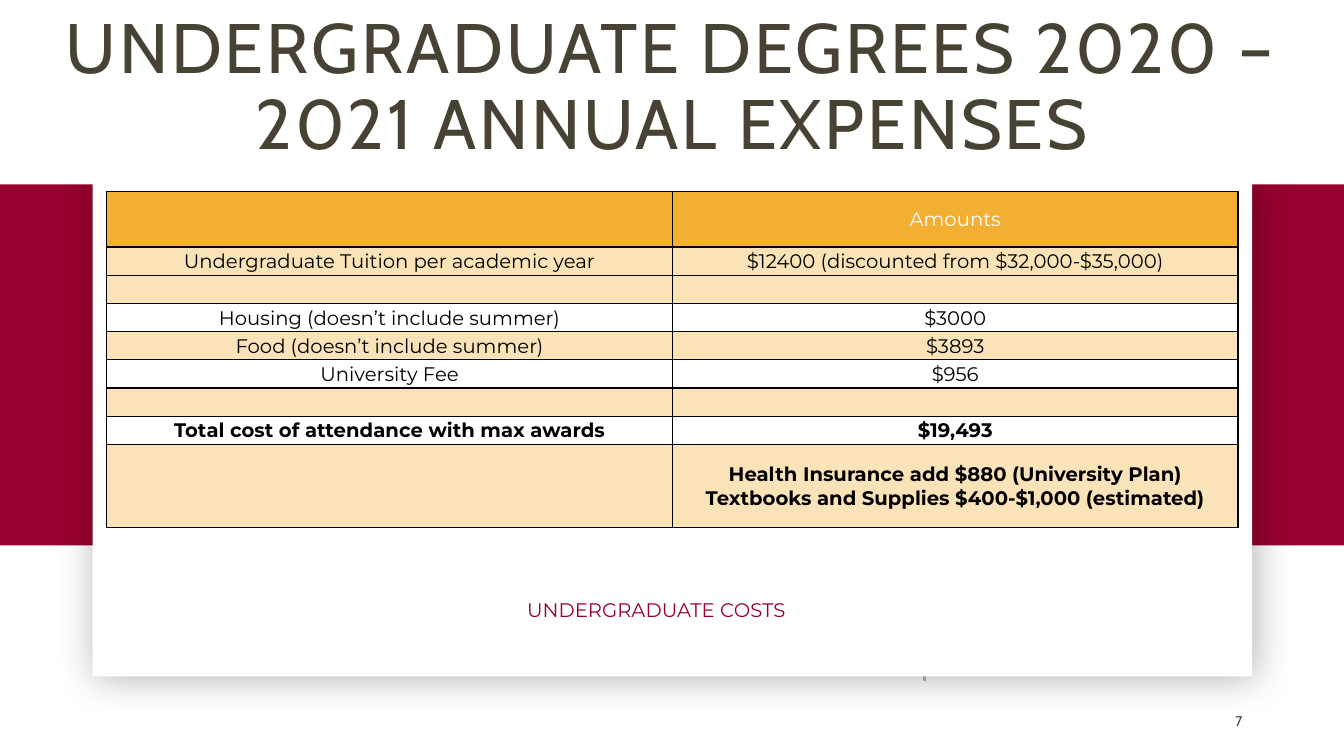
from lxml import etree
from pptx import Presentation
from pptx.dml.color import RGBColor
from pptx.enum.shapes import MSO_CONNECTOR, MSO_SHAPE
from pptx.enum.text import MSO_ANCHOR, PP_ALIGN
from pptx.oxml.ns import qn
from pptx.util import Inches, Pt

RECTANGLE = MSO_SHAPE.RECTANGLE
STRAIGHT = MSO_CONNECTOR.STRAIGHT
MIDDLE, TOP = MSO_ANCHOR.MIDDLE, MSO_ANCHOR.TOP
CENTER, RIGHT = PP_ALIGN.CENTER, PP_ALIGN.RIGHT

WHITE = RGBColor(0xFF, 0xFF, 0xFF)
BLACK = RGBColor(0, 0, 0)
BURGUNDY = RGBColor(0x98, 0x01, 0x2E)
GOLD = RGBColor(0xF2, 0xAF, 0x32)
BROWN = RGBColor(0x47, 0x42, 0x33)
TEAL = RGBColor(0x9C, 0xBE, 0xBD)

HEADING_FONT, BODY_FONT = "Cabin", "Montserrat"

# Left text, right text, row height, fill, fill opacity in percent, bold
EXPENSES = [
    ("", "Amounts", 0.55, GOLD, 100, False),
    ("Undergraduate Tuition per academic year",
     "$12400 (discounted from $32,000-$35,000)", 0.28, GOLD, 35, False),
    ("", "", 0.28, GOLD, 34, False),
    ("Housing (doesn’t include summer)", "$3000", 0.28, WHITE, 100, False),
    ("Food (doesn’t include summer)", "$3893", 0.28, GOLD, 34, False),
    ("University Fee", "$956", 0.28, WHITE, 100, False),
    ("", "", 0.28, GOLD, 34, False),
    ("Total cost of attendance with max awards", "$19,493", 0.28, WHITE, 100, True),
    ("", "Health Insurance add $880 (University Plan)\n"
     "Textbooks and Supplies $400-$1,000 (estimated)", 0.82, GOLD, 34, True),
]


def add_child(parent, tag, **attributes):
    return etree.SubElement(parent, qn(tag), attributes)


def add_panel(page, left, top, width, height, color):
    panel = page.shapes.add_shape(
        RECTANGLE, Inches(left), Inches(top), Inches(width), Inches(height))
    panel.shadow.inherit = False
    panel.fill.solid()
    panel.fill.fore_color.rgb = color
    panel.line.fill.background()
    return panel


def add_soft_shadow(panel):
    effects = panel._element.spPr.find(qn("a:effectLst"))
    shadow = add_child(effects, "a:outerShdw", blurRad=str(Pt(28)), dist=str(Pt(3)),
                       dir=str(45 * 60000), algn="tl", rotWithShape="0")
    color = add_child(shadow, "a:srgbClr", val=str(BLACK))
    add_child(color, "a:alpha", val="30000")


def add_accent_line(page, x, start, end):
    line = page.shapes.add_connector(
        STRAIGHT, Inches(x), Inches(start), Inches(x), Inches(end))
    line.line.color.rgb = TEAL
    line.line.width = Pt(1.5)
    add_child(line._element.spPr, "a:effectLst")


def write_text(frame, text, size, font, color, align=CENTER, bold=False):
    frame.word_wrap = True
    frame.text = text
    for para in frame.paragraphs:
        para.alignment = align
        para.font.size = Pt(size)
        para.font.name = font
        para.font.bold = bold
        para.font.color.rgb = color
        if not para.runs:
            add_child(para._p, "a:endParaRPr", sz=str(size * 100))


def add_label(page, left, top, width, height, text, size, font, color, align, anchor):
    box = page.shapes.add_textbox(
        Inches(left), Inches(top), Inches(width), Inches(height))
    box.text_frame.vertical_anchor = anchor
    write_text(box.text_frame, text, size, font, color, align)


def add_title(page, text):
    banner = add_panel(page, 0, -0.07, 13.33, 1.9, WHITE)
    banner.text_frame.vertical_anchor = MIDDLE
    write_text(banner.text_frame, text, 50, HEADING_FONT, BROWN)
    para = banner.text_frame.paragraphs[0]
    para.line_spacing = 0.9
    para.runs[0]._r.get_or_add_rPr().set("spc", "200")


def style_cell(cell, color, opacity):
    """Give a cell its fill, thin black borders and tight margins."""
    cell.vertical_anchor = MIDDLE
    cell.margin_left = cell.margin_right = cell.margin_top = Inches(0.01)
    cell.margin_bottom = 0
    properties = cell._tc.get_or_add_tcPr()
    for side in ("a:lnL", "a:lnR", "a:lnT", "a:lnB"):
        border = add_child(properties, side, w=str(Pt(1)))
        fill = add_child(border, "a:solidFill")
        add_child(fill, "a:srgbClr", val=str(BLACK))
    cell.fill.solid()
    cell.fill.fore_color.rgb = color
    if opacity < 100:
        tint = properties.find(qn("a:solidFill")).find(qn("a:srgbClr"))
        add_child(tint, "a:alpha", val=str(opacity * 1000))


def add_expense_table(page):
    height = sum(row[2] for row in EXPENSES)
    table = page.shapes.add_table(len(EXPENSES), 2, Inches(1.06), Inches(1.9),
                                  Inches(11.22), Inches(height)).table
    for index, (item, amount, height, color, opacity, bold) in enumerate(EXPENSES):
        table.rows[index].height = Inches(height)
        text_color = WHITE if index == 0 else BLACK
        for cell, text in zip(table.rows[index].cells, (item, amount)):
            style_cell(cell, color, opacity)
            write_text(cell.text_frame, text, 14, BODY_FONT, text_color, bold=bold)


def main():
    deck = Presentation()
    deck.slide_width, deck.slide_height = Inches(13.33), Inches(7.5)
    page = deck.slides.add_slide(deck.slide_layouts[6])
    add_accent_line(page, 9.17, 6.76, 5.76)
    add_panel(page, 0, 1.76, 13.33, 3.65, BURGUNDY)
    card = add_panel(page, 0.92, 1.76, 11.5, 4.95, WHITE)
    add_soft_shadow(card)
    add_title(page, "UNDERGRADUATE DEGREES 2020 – 2021 ANNUAL EXPENSES")
    add_label(page, 9.42, 6.95, 3, 0.4, "7", 10, HEADING_FONT, BROWN, RIGHT, MIDDLE)
    add_expense_table(page)
    add_label(page, 4.71, 5.88, 3.6, 0.34, "UNDERGRADUATE COSTS", 14, BODY_FONT,
              BURGUNDY, CENTER, TOP)
    deck.save("out.pptx")


if __name__ == "__main__":
    main()
